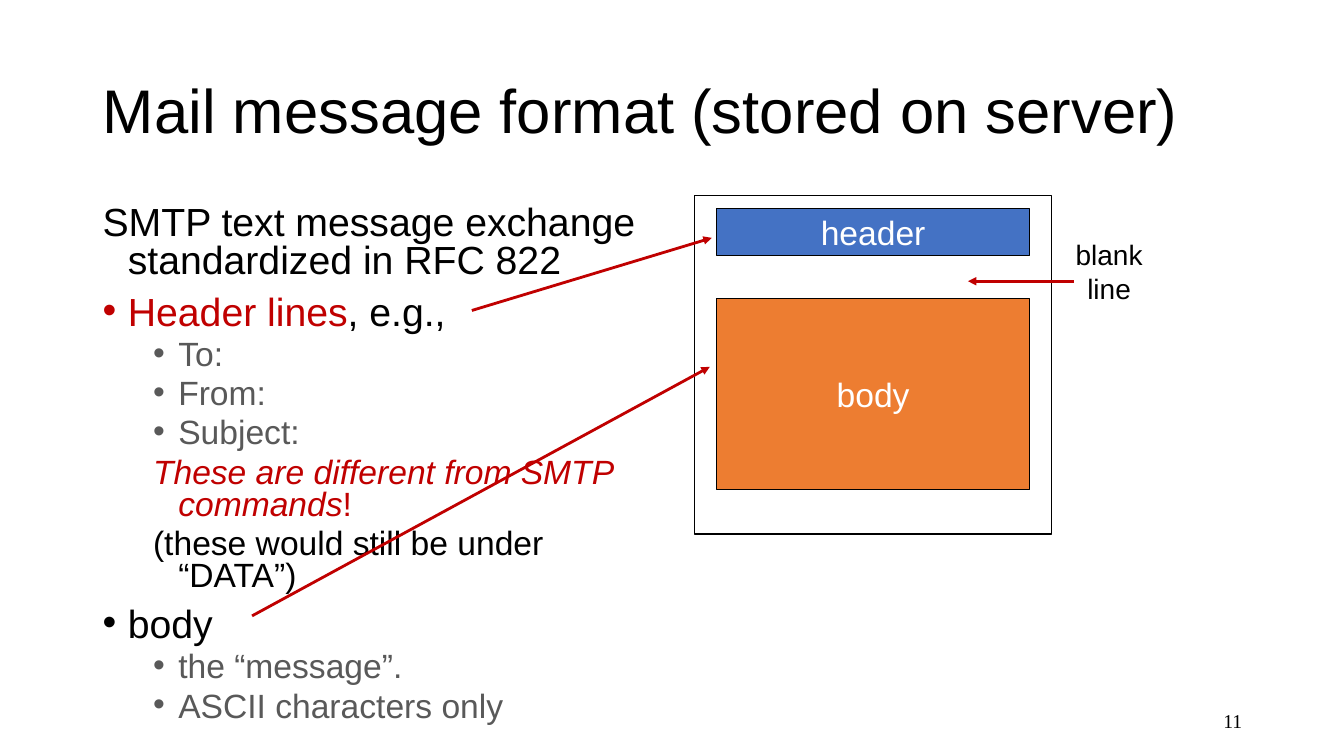
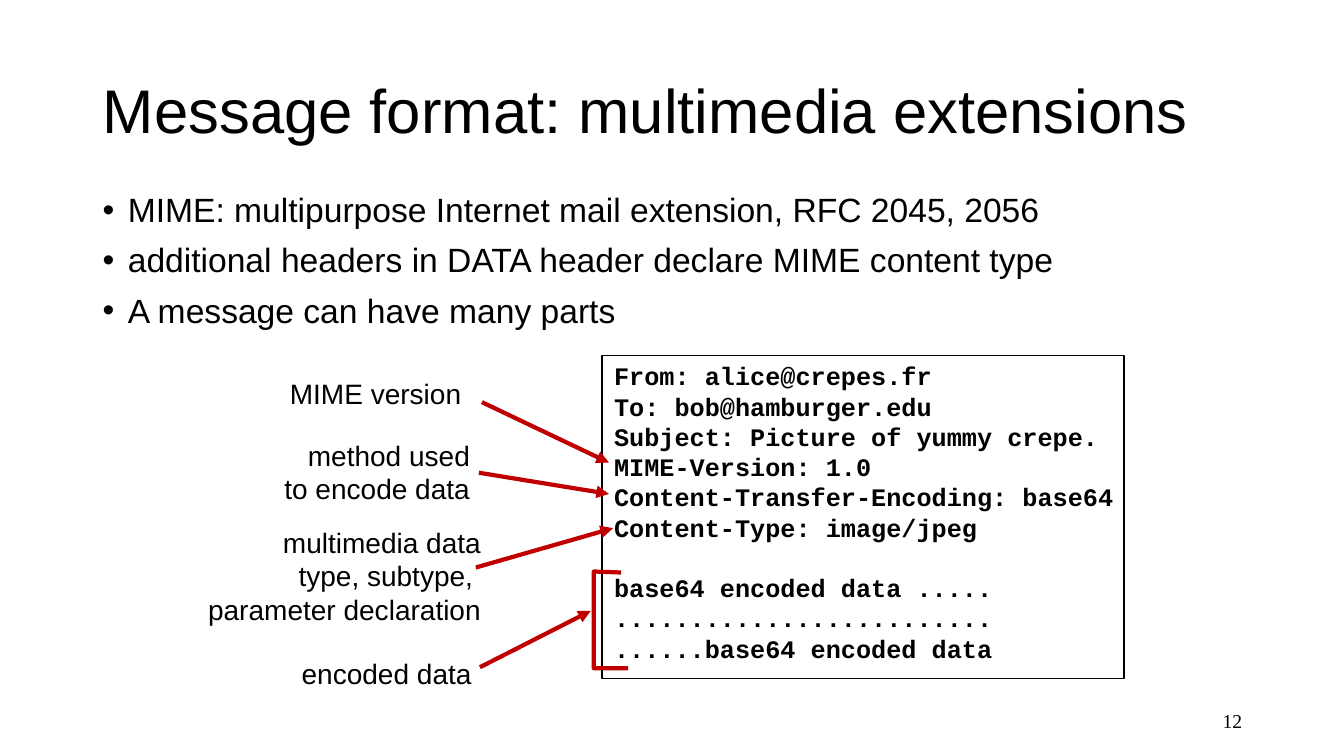
from dataclasses import dataclass

from lxml.etree import SubElement
from pptx import Presentation
from pptx.dml.color import RGBColor
from pptx.enum.shapes import MSO_CONNECTOR, MSO_SHAPE
from pptx.enum.text import MSO_ANCHOR, MSO_AUTO_SIZE, PP_ALIGN
from pptx.oxml.ns import qn
from pptx.util import Inches, Pt

BLACK = RGBColor(0x00, 0x00, 0x00)
WHITE = RGBColor(0xFF, 0xFF, 0xFF)
GRAY = RGBColor(0x59, 0x59, 0x59)
RED = RGBColor(0xC0, 0x00, 0x00)
BLUE = RGBColor(0x44, 0x72, 0xC4)
ORANGE = RGBColor(0xED, 0x7D, 0x31)

SANS = "Arial"
MONO = "Courier New"
SERIF = "Times New Roman"
TITLE_ONLY = 5
MAIL_LINE_HEIGHT = Pt(21.6)


@dataclass
class Item:
    """One outline paragraph: its (text, colour, italic) runs, size, level and bullet."""
    runs: list
    size: int
    level: int = 0
    bullet: bool = True


def point(text, size=28):
    """Return a bulleted top-level item."""
    return Item([(text, BLACK, False)], size)


def detail(text):
    """Return a bulleted second-level item."""
    return Item([(text, GRAY, False)], 24, level=1)


MAIL_OUTLINE = [
    Item([("SMTP text message exchange standardized in RFC 822", BLACK, False)], 28, bullet=False),
    Item([("Header lines", RED, False), (", e.g.,", BLACK, False)], 28),
    detail("To:"),
    detail("From:"),
    detail("Subject:"),
    Item([("These are different from SMTP commands", RED, True), ("!", RED, False)],
         24, level=1, bullet=False),
    Item([("(these would still be under “DATA”)", BLACK, False)], 24, level=1, bullet=False),
    point("body"),
    detail("the “message”."),
    detail("ASCII characters only"),
]

MIME_OUTLINE = [
    point("MIME: multipurpose Internet mail extension, RFC 2045, 2056", 24),
    point("additional headers in DATA header declare MIME content type", 24),
    point("A message can have many parts", 24),
]

MAIL_HEADERS = [
    "From: alice@crepes.fr",
    "To: bob@hamburger.edu",
    "Subject: Picture of yummy crepe.",
    "MIME-Version: 1.0",
    "Content-Transfer-Encoding: base64",
    "Content-Type: image/jpeg",
]
MAIL_DATA = [
    "base64 encoded data .....",
    ".........................",
    "......base64 encoded data",
]

MIME_CALLOUTS = [
    ("MIME version", (2.77, 3.69, 1.91, 0.44), PP_ALIGN.CENTER, (4.78, 3.99), (6.04, 4.59)),
    ("method used\nto encode data", (2.64, 4.3, 2.12, 0.77), PP_ALIGN.RIGHT,
     (4.75, 4.69), (6.04, 4.9)),
    ("multimedia data\ntype, subtype, \nparameter declaration", (1.94, 5.16, 2.93, 1.11),
     PP_ALIGN.RIGHT, (4.72, 5.63), (6.08, 5.24)),
    ("encoded data", (2.86, 6.46, 1.95, 0.44), PP_ALIGN.CENTER, (4.76, 6.62), (5.86, 6.06)),
]


def inches(values):
    """Convert a sequence of numbers to lengths."""
    return [Inches(value) for value in values]


def format_font(font, size, color, name=SANS, bold=False, italic=False):
    """Set every font property the slides use."""
    font.name, font.size = name, Pt(size)
    font.bold, font.italic = bold, italic
    font.color.rgb = color


def write_text(shape, text, size, color=BLACK, align=PP_ALIGN.LEFT, anchor=MSO_ANCHOR.TOP,
               wrap=False, name=SANS, bold=False):
    """Fill a shape with uniformly formatted text."""
    frame = shape.text_frame
    frame.text = text
    frame.word_wrap = wrap
    frame.auto_size = MSO_AUTO_SIZE.NONE
    frame.vertical_anchor = anchor
    for paragraph in frame.paragraphs:
        paragraph.alignment = align
        for run in paragraph.runs:
            format_font(run.font, size, color, name, bold)


def add_label(slide, box, text, size=20, **style):
    """Add a text box with uniformly formatted text."""
    label = slide.shapes.add_textbox(*inches(box))
    write_text(label, text, size, **style)


def add_titled_slide(presentation, title, number):
    """Add a slide with its title and slide number."""
    slide = presentation.slides.add_slide(presentation.slide_layouts[TITLE_ONLY])
    shape = slide.shapes.title
    shape.left, shape.top, shape.width, shape.height = inches((0.92, 0.4, 11.5, 1.45))
    write_text(shape, title, 44, anchor=MSO_ANCHOR.MIDDLE, wrap=True)
    shape.text_frame.paragraphs[0].line_spacing = 0.9
    add_label(slide, (9.42, 6.95, 3, 0.4), str(number), 14, align=PP_ALIGN.RIGHT,
              anchor=MSO_ANCHOR.MIDDLE, wrap=True, name=SERIF)
    return slide


def add_outline(slide, box, items, line_spacing):
    """Add a two-level outline with hanging indents."""
    frame = slide.shapes.add_textbox(*inches(box)).text_frame
    frame.word_wrap = True
    for index, item in enumerate(items):
        paragraph = frame.add_paragraph() if index else frame.paragraphs[0]
        paragraph.level = item.level
        paragraph.line_spacing = line_spacing
        paragraph.space_before = Pt(5 if item.level else 10)
        for text, color, italic in item.runs:
            run = paragraph.add_run()
            run.text = text
            format_font(run.font, item.size, color, italic=italic)
        properties = paragraph._p.get_or_add_pPr()
        properties.set("marL", str(Inches(0.25 + 0.5 * item.level)))
        properties.set("indent", str(Inches(-0.25)))
        if item.bullet:
            SubElement(properties, qn("a:buFont")).set("typeface", SANS)
            SubElement(properties, qn("a:buChar")).set("char", "•")


def add_box(slide, box, fill=None, line_width=1.0):
    """Add a black-outlined rectangle, hollow unless a fill is given."""
    shape = slide.shapes.add_shape(MSO_SHAPE.RECTANGLE, *inches(box))
    shape.shadow.inherit = False
    if fill is None:
        shape.fill.background()
    else:
        shape.fill.solid()
        shape.fill.fore_color.rgb = fill
    shape.line.color.rgb = BLACK
    shape.line.width = Pt(line_width)
    return shape


def add_arrow(slide, start, end, width):
    """Add a red arrow from start to end."""
    arrow = slide.shapes.add_connector(MSO_CONNECTOR.STRAIGHT, *inches(start + end))
    arrow.line.color.rgb = RED
    arrow.line.width = Pt(width)
    SubElement(arrow.line._get_or_add_ln(), qn("a:tailEnd")).set("type", "triangle")
    SubElement(arrow._element.spPr, qn("a:effectLst"))


def add_bracket(slide, points):
    """Add an open red outline through the points."""
    start, *rest = [inches(position) for position in points]
    builder = slide.shapes.build_freeform(*start)
    builder.add_line_segments(rest, close=False)
    bracket = builder.convert_to_shape()
    bracket.shadow.inherit = False
    bracket.fill.background()
    bracket.line.color.rgb = RED
    bracket.line.width = Pt(3)


def add_mail_message(slide, box):
    """Add the framed mail text, with a line's gap between headers and data."""
    message = add_box(slide, box)
    write_text(message, "\n".join(MAIL_HEADERS + MAIL_DATA), 18, name=MONO, bold=True)
    message.text_frame.margin_left = Inches(0.12)
    paragraphs = message.text_frame.paragraphs
    for paragraph in paragraphs:
        paragraph.line_spacing = MAIL_LINE_HEIGHT
    paragraphs[len(MAIL_HEADERS)].space_before = MAIL_LINE_HEIGHT


def build_mail_format(presentation):
    """Build the slide on header and body of a stored message."""
    slide = add_titled_slide(presentation, "Mail message format (stored on server)", 11)
    add_outline(slide, (0.92, 2, 5.67, 5.35), MAIL_OUTLINE, 0.8)
    add_box(slide, (6.89, 1.94, 3.54, 3.36))
    for text, top, height, fill in (("header", 2.07, 0.47, BLUE), ("body", 2.96, 1.9, ORANGE)):
        part = add_box(slide, (7.11, top, 3.1, height), fill, 0.75)
        write_text(part, text, 24, WHITE, PP_ALIGN.CENTER, MSO_ANCHOR.MIDDLE)
    add_label(slide, (10.56, 2.31, 0.88, 0.77), "blank\nline", align=PP_ALIGN.CENTER)
    for start, end in (((4.68, 3.08), (7.06, 2.36)),
                       ((2.5, 6.11), (7.04, 3.64)),
                       ((10.65, 2.79), (9.6, 2.79))):
        add_arrow(slide, start, end, 2)


def build_mime(presentation):
    """Build the slide on the MIME extensions."""
    slide = add_titled_slide(presentation, "Message format: multimedia extensions", 12)
    add_outline(slide, (0.92, 1.87, 10.83, 1.55), MIME_OUTLINE, 0.9)
    add_mail_message(slide, (5.97, 3.53, 5.18, 3.2))
    for text, box, align, start, end in MIME_CALLOUTS:
        add_label(slide, box, text, align=align)
        add_arrow(slide, start, end, 3)
    add_bracket(slide, [(6.16, 5.68), (5.89, 5.67), (5.89, 6.63), (6.23, 6.63)])


def main():
    """Build and save the presentation."""
    presentation = Presentation()
    presentation.slide_width = Inches(13.33)
    presentation.slide_height = Inches(7.5)
    build_mail_format(presentation)
    build_mime(presentation)
    presentation.save("out.pptx")


if __name__ == "__main__":
    main()
